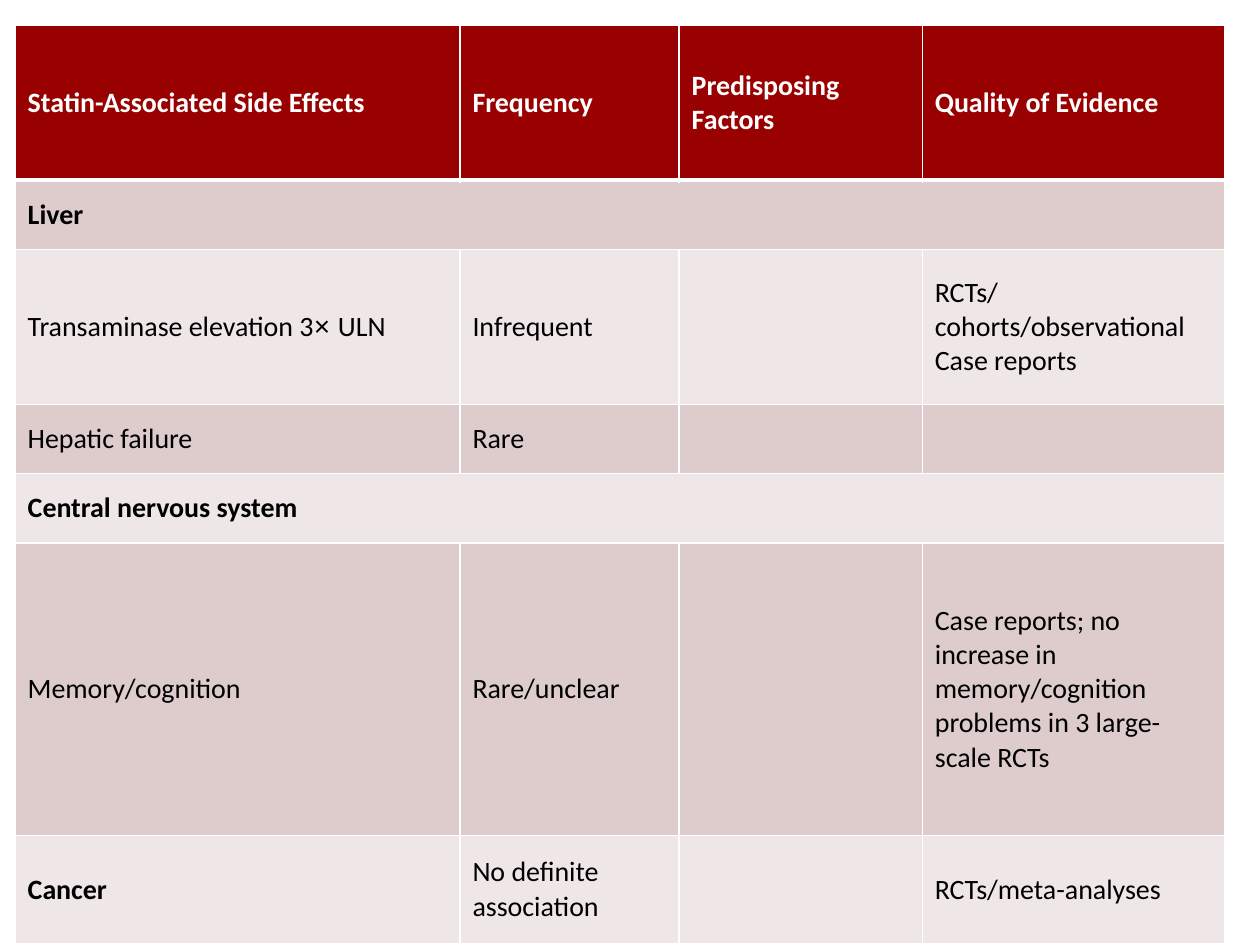
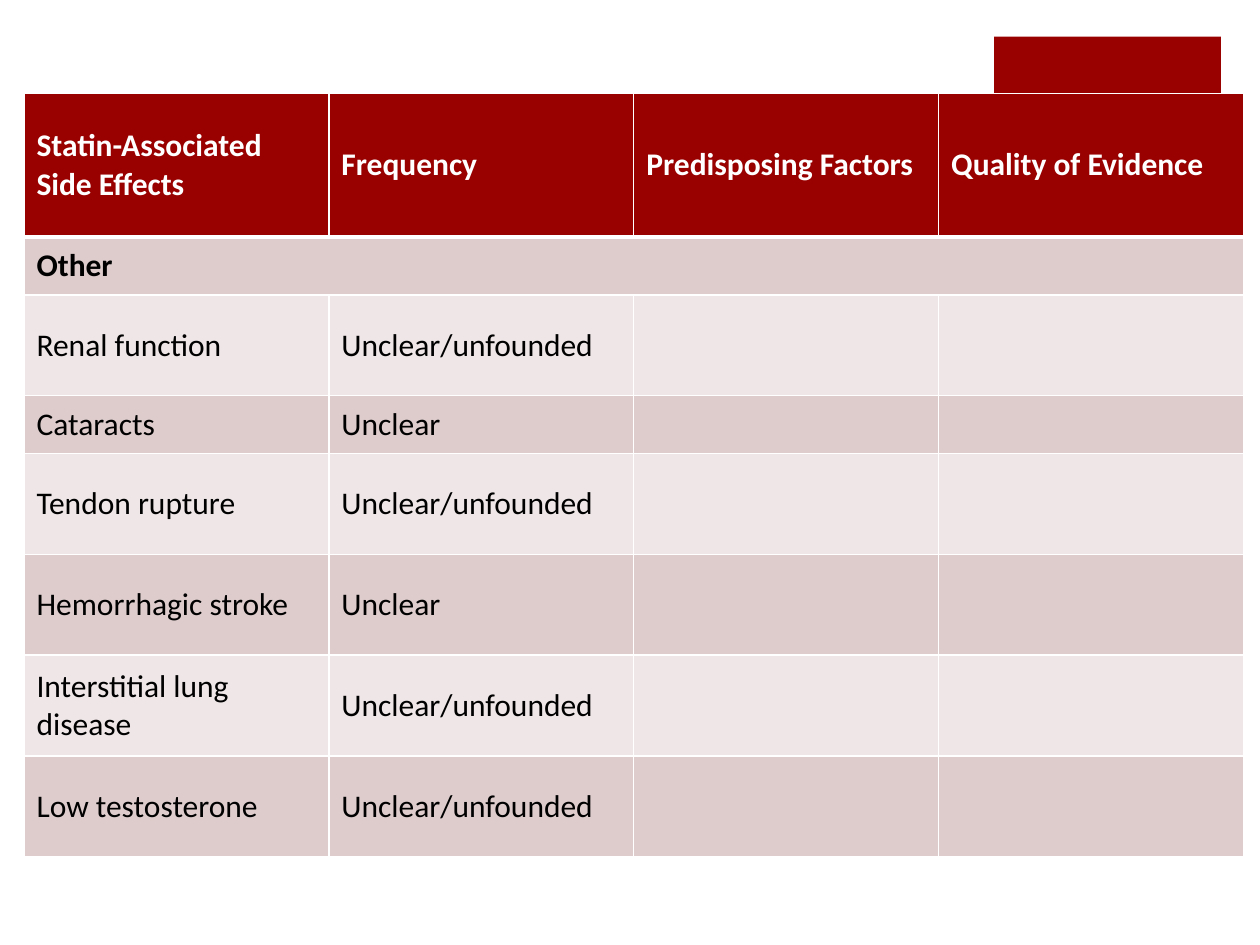
from dataclasses import dataclass

from lxml.etree import SubElement
from pptx import Presentation
from pptx.dml.color import RGBColor
from pptx.enum.shapes import MSO_SHAPE as Shape
from pptx.enum.text import MSO_ANCHOR as Anchor
from pptx.oxml.ns import qn
from pptx.util import Inches, Pt

COLOURS = {
    "crimson": "990000",
    "band_dark": "DECCCC",
    "band_light": "EFE7E7",
    "white": "FFFFFF",
    "black": "000000",
}
FONT = "Calibri"
HEADINGS = ("Statin-Associated Side Effects", "Frequency",
            "Predisposing Factors", "Quality of Evidence")


@dataclass(frozen=True)
class Span:
    text: str
    font: str = FONT


@dataclass(frozen=True)
class Row:
    """One table row; a single text makes a section row across all columns."""
    height: float
    texts: tuple[str | tuple[Span, ...], ...]
    bold_label: bool = False


@dataclass(frozen=True)
class EffectsTable:
    left: float
    top: float
    widths: tuple[float, ...]
    header_height: float
    size: int
    rows: tuple[Row, ...]


def section(height: float, name: str) -> Row:
    return Row(height, (name,), bold_label=True)


TABLES = (
    EffectsTable(0.12, 0.2, (3.53, 1.74, 1.93, 2.4), 1.23, 16, (
        section(0.55, "Liver"),
        Row(1.23, ((Span("Transaminase elevation 3"), Span("× ", "Arial"), Span("ULN")),
                   "Infrequent", "", "RCTs/ cohorts/observational Case reports")),
        Row(0.55, ("Hepatic failure", "Rare", "", "")),
        section(0.55, "Central nervous system"),
        Row(2.32, ("Memory/cognition", "Rare/unclear", "",
                   "Case reports; no increase in memory/cognition problems "
                   "in 3 large-scale RCTs")),
        Row(0.86, ("Cancer", "No definite association", "", "RCTs/meta-analyses"),
            bold_label=True),
    )),
    EffectsTable(0.19, 0.74, (2.42,) * 4, 1.14, 18, (
        section(0.46, "Other"),
        Row(0.8, ("Renal function", "Unclear/unfounded", "", "")),
        Row(0.46, ("Cataracts", "Unclear", "", "")),
        Row(0.8, ("Tendon rupture", "Unclear/unfounded", "", "")),
        Row(0.8, ("Hemorrhagic stroke", "Unclear", "", "")),
        Row(0.8, ("Interstitial lung disease", "Unclear/unfounded", "", "")),
        Row(0.8, ("Low testosterone", "Unclear/unfounded", "", "")),
    )),
)


def colour(name: str) -> RGBColor:
    return RGBColor.from_string(COLOURS[name])


def add_corner_block(page) -> None:
    block = page.shapes.add_shape(Shape.RECTANGLE, Inches(7.89), Inches(0.29),
                                  Inches(1.8), Inches(1.8))
    block.shadow.inherit = False
    block.fill.solid()
    block.fill.fore_color.rgb = colour("crimson")
    block.line.fill.background()


def set_borders(cell, top: float, bottom: float) -> None:
    properties = cell._tc.get_or_add_tcPr()
    for side, width in (("L", 1), ("R", 1), ("T", top), ("B", bottom)):
        line = SubElement(properties, qn(f"a:ln{side}"), w=str(Pt(width)))
        fill = SubElement(line, qn("a:solidFill"))
        SubElement(fill, qn("a:srgbClr"), val=COLOURS["white"])


def write_cell(cell, content: str | tuple[Span, ...], size: int,
               ink: str, bold: bool) -> None:
    cell.vertical_anchor = Anchor.MIDDLE
    para = cell.text_frame.paragraphs[0]
    spans = (Span(content),) if isinstance(content, str) else content
    for span in spans:
        if not span.text:
            continue
        run = para.add_run()
        run.text = span.text
        run.font.name = span.font
        run.font.size = Pt(size)
        run.font.bold = bold
        run.font.color.rgb = colour(ink)


def add_effects_table(page, spec: EffectsTable) -> None:
    rows = (Row(spec.header_height, HEADINGS), *spec.rows)
    table = page.shapes.add_table(
        len(rows), len(spec.widths), Inches(spec.left), Inches(spec.top),
        Inches(sum(spec.widths)), Inches(sum(row.height for row in rows))).table
    for column, width in zip(table.columns, spec.widths):
        column.width = Inches(width)

    for index, row in enumerate(rows):
        table.rows[index].height = Inches(row.height)
        header = index == 0
        band = "crimson" if header else "band_dark" if index % 2 else "band_light"
        if len(row.texts) == 1:
            table.cell(index, 0).merge(table.cell(index, len(spec.widths) - 1))
        for position, content in enumerate(row.texts):
            cell = table.cell(index, position)
            # A thick rule separates the header from the body
            set_borders(cell, top=3 if index == 1 else 1, bottom=3 if header else 1)
            cell.fill.solid()
            cell.fill.fore_color.rgb = colour(band)
            write_cell(cell, content, spec.size, "white" if header else "black",
                       header or (row.bold_label and position == 0))


def main() -> None:
    deck = Presentation()
    deck.slide_width, deck.slide_height = Inches(10), Inches(7.5)
    blank = deck.slide_layouts[6]
    for spec in TABLES:
        page = deck.slides.add_slide(blank)
        add_corner_block(page)
        add_effects_table(page, spec)
    deck.save("out.pptx")


if __name__ == "__main__":
    main()
